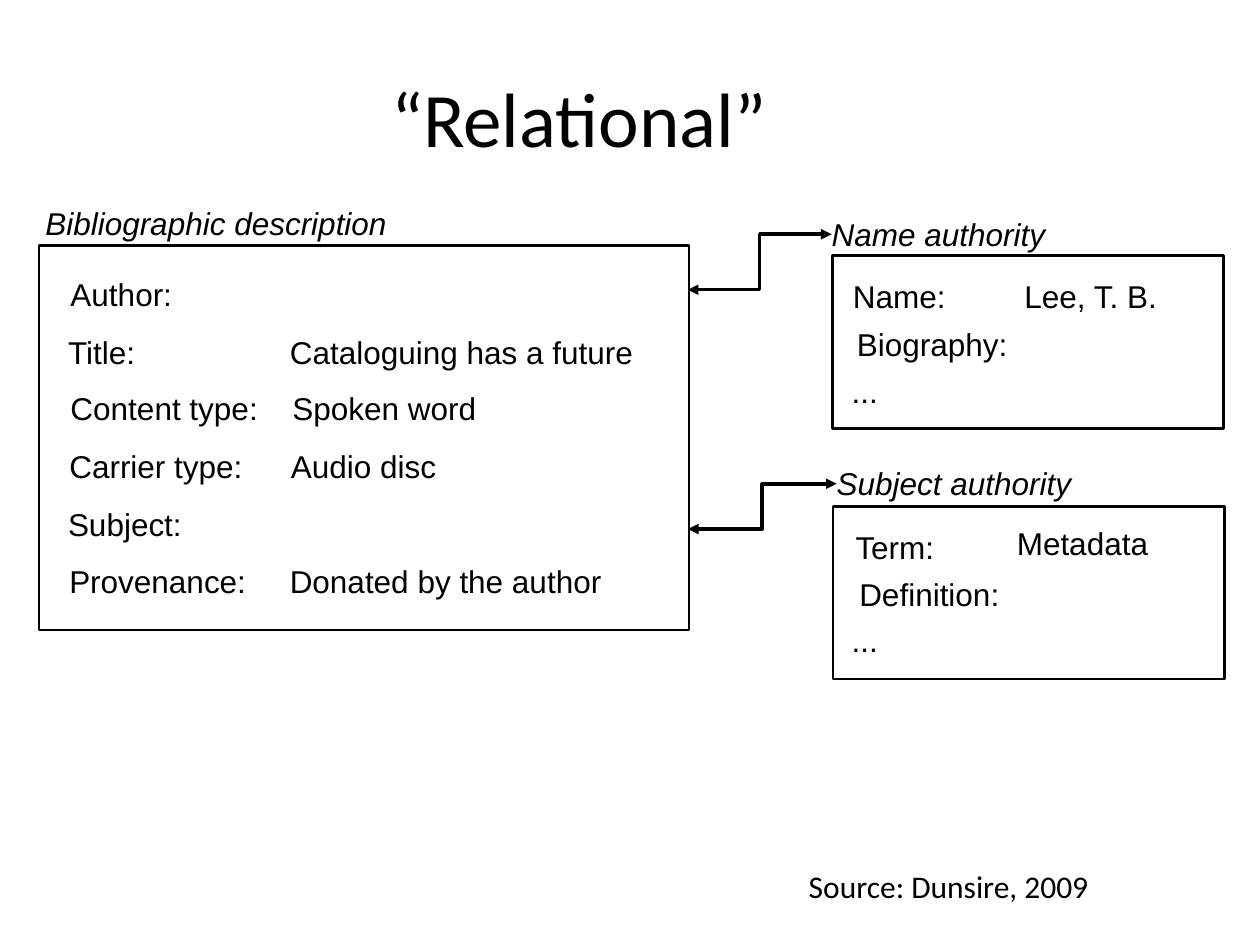
from dataclasses import dataclass

from lxml.etree import SubElement
from pptx import Presentation
from pptx.dml.color import RGBColor
from pptx.enum.shapes import MSO_CONNECTOR, MSO_SHAPE
from pptx.enum.text import MSO_ANCHOR, MSO_AUTO_SIZE, PP_ALIGN
from pptx.oxml.ns import qn
from pptx.util import Inches, Pt

COLORS = {"ink": "000000"}
INK = RGBColor.from_string(COLORS["ink"])
LABEL_HEIGHT = 0.31
ROW_TOP, ROW_STEP = 2.18, 0.457


@dataclass
class Label:
    text: str
    left: float
    top: float
    width: float
    height: float = LABEL_HEIGHT
    italic: bool = False
    size: int = 18
    font: str = "Arial"


@dataclass
class Frame:
    left: float
    top: float
    width: float
    height: float


@dataclass
class Link:
    start: tuple[float, float]
    end: tuple[float, float]


def add_label(slide, label: Label, inset: tuple[float, float] = (0, 0)):
    box = slide.shapes.add_textbox(Inches(label.left), Inches(label.top),
                                   Inches(label.width), Inches(label.height))
    text_frame = box.text_frame
    text_frame.word_wrap = False
    text_frame.auto_size = MSO_AUTO_SIZE.SHAPE_TO_FIT_TEXT
    text_frame.margin_left = text_frame.margin_right = Inches(inset[0])
    text_frame.margin_top = text_frame.margin_bottom = Inches(inset[1])
    run = text_frame.paragraphs[0].add_run()
    run.text = label.text
    run.font.name = label.font
    run.font.size = Pt(label.size)
    run.font.italic = label.italic
    run.font.color.rgb = INK
    return text_frame


def add_frame(slide, frame: Frame) -> None:
    shape = slide.shapes.add_shape(MSO_SHAPE.RECTANGLE, Inches(frame.left), Inches(frame.top),
                                   Inches(frame.width), Inches(frame.height))
    shape.shadow.inherit = False
    shape.fill.background()
    shape.line.color.rgb = INK
    shape.line.width = Pt(1.5)


def add_link(slide, link: Link) -> None:
    points = [Inches(value) for value in (*link.start, *link.end)]
    connector = slide.shapes.add_connector(MSO_CONNECTOR.ELBOW, *points)
    connector.line.color.rgb = INK
    connector.line.width = Pt(2)
    line = connector.line._get_or_add_ln()
    for tag in ("a:headEnd", "a:tailEnd"):
        SubElement(line, qn(tag), type="triangle")
    SubElement(connector._element.spPr, qn("a:effectLst"))


# Bibliographic rows: name, left, width, then value, left, width
RECORD_ROWS = [
    (("Author:", 0.56, 0.83),),
    (("Title:", 0.54, 0.54), ("Cataloguing has a future", 2.3, 2.82)),
    (("Content type:", 0.56, 1.54), ("Spoken word", 2.32, 1.51)),
    (("Carrier type:", 0.55, 1.42), ("Audio disc", 2.31, 1.23)),
    (("Subject:", 0.54, 0.94),),
    (("Provenance:", 0.55, 1.43), ("Donated by the author", 2.3, 2.57)),
]

AUTHORITY_LABELS = [
    Label("Name:", 6.77, 2.2, 0.76),
    Label("Lee, T. B.", 8.13, 2.2, 1.07),
    Label("Biography:", 6.8, 2.58, 1.25),
    Label("...", 6.76, 2.95, 0.21),
    Label("Term:", 6.79, 4.19, 0.63),
    Label("Metadata", 8.07, 4.16, 1.09),
    Label("Definition:", 6.82, 4.56, 1.14),
    Label("...", 6.76, 4.93, 0.21),
]

HEADINGS = [
    Label("Bibliographic description", 0.36, 1.62, 2.94, italic=True),
    Label("Name authority", 6.6, 1.71, 1.8, italic=True),
    Label("Subject authority", 6.64, 3.68, 1.99, italic=True),
]

FRAMES = [
    Frame(0.31, 1.95, 5.16, 3.05),
    Frame(6.61, 2.03, 3.1, 1.37),
    Frame(6.61, 4.02, 3.11, 1.37),
]

LINKS = [
    Link((5.46, 4.2), (6.64, 3.84)),
    Link((5.46, 2.3), (6.6, 1.86)),
]


def main() -> None:
    presentation = Presentation()
    presentation.slide_width, presentation.slide_height = Inches(10), Inches(7.5)
    slide = presentation.slides.add_slide(presentation.slide_layouts[6])

    # Record and authority boxes
    for frame in FRAMES:
        add_frame(slide, frame)

    # Record fields on evenly spaced rows
    for index, row in enumerate(RECORD_ROWS):
        top = round(ROW_TOP + index * ROW_STEP, 2)
        for text, left, width in row:
            add_label(slide, Label(text, left, top, width))

    # Authority fields and headings
    for label in AUTHORITY_LABELS + HEADINGS:
        add_label(slide, label)

    # Links from the record to its authorities
    for link in LINKS:
        add_link(slide, link)

    # Title and source
    title = add_label(slide, Label("“Relational”", 0.5, 0.3, 8.19, 1.25, size=44, font="Calibri"),
                      inset=(0.1, 0.05))
    title.auto_size = MSO_AUTO_SIZE.NONE
    title.word_wrap = True
    title.vertical_anchor = MSO_ANCHOR.MIDDLE
    title.paragraphs[0].alignment = PP_ALIGN.CENTER
    add_label(slide, Label("Source: Dunsire, 2009", 6.32, 6.83, 2.45, 0.4, font="Calibri"),
              inset=(0.1, 0.05))

    presentation.save("out.pptx")


if __name__ == "__main__":
    main()
